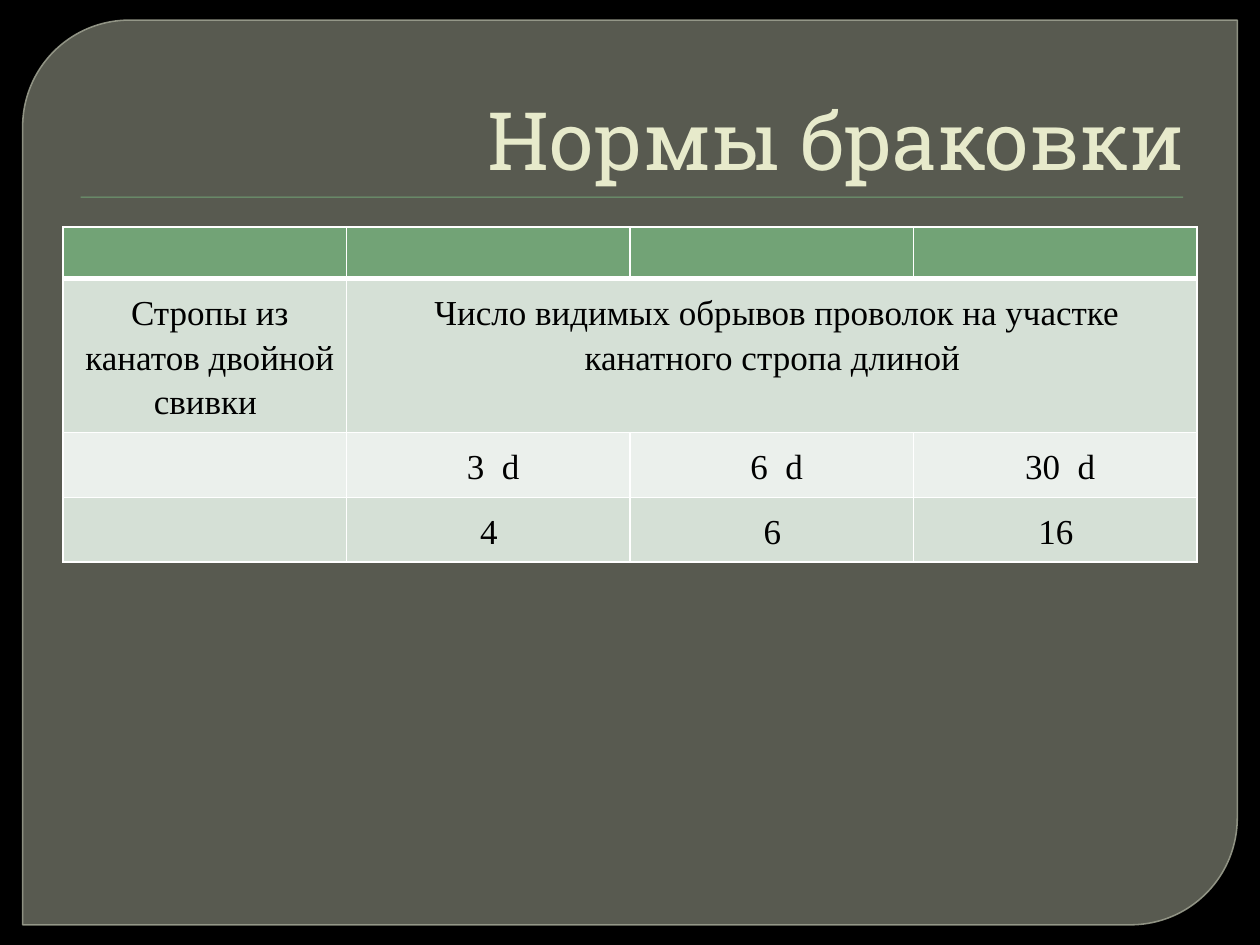
from lxml.etree import SubElement
from pptx import Presentation
from pptx.dml.color import RGBColor
from pptx.enum.shapes import MSO_SHAPE
from pptx.enum.text import MSO_ANCHOR, MSO_AUTO_SIZE, PP_ALIGN
from pptx.oxml.ns import qn
from pptx.util import Inches, Pt

THEME = {
    "back": "000000", "panel": "888B7B", "edge": "9DA090", "accent": "72A376",
    "title": "E7EACB", "text": "000000", "border": "FFFFFF",
    "bands": ["72A376", "D5E0D6", "EBF0EC", "D5E0D6"],
    "title_font": "Roboto Slab", "title_size": 46,
    "body_font": "Times New Roman", "body_size": 20,
}


def paint(fill, color, alpha=None):
    fill.solid()
    fill.fore_color.rgb = RGBColor.from_string(color)
    if alpha:
        clr = fill._xPr.find(".//" + qn("a:srgbClr"))
        SubElement(clr, qn("a:alpha"), val=str(alpha * 1000))


def style(p, text, font, size, color, **fmt):
    r = p.add_run()
    r.text = text
    r.font.name, r.font.size = font, Pt(size)
    r.font.color.rgb = RGBColor.from_string(color)
    for name, value in fmt.items():
        setattr(p, name, value)


prs = Presentation()
prs.slide_width, prs.slide_height = Inches(10), Inches(7.5)
W, H = prs.slide_width, prs.slide_height
s = prs.slides.add_slide(prs.slide_layouts[5])
paint(s.background.fill, THEME["back"])

panel = s.shapes.add_shape(MSO_SHAPE.ROUND_2_DIAG_RECTANGLE,
                           int(W * 0.018), Inches(0.16), int(W * 0.964), Inches(7.18))
panel.adjustments[0] = 0.118
panel.shadow.inherit = False
paint(panel.fill, THEME["panel"], 65)
paint(panel.line.fill, THEME["edge"], 88)
panel.line.width = Pt(0.87)

rule = s.shapes.add_shape(MSO_SHAPE.RECTANGLE,
                          int(W * 0.064), Inches(1.56), int(W * 0.875), Inches(0.01))
rule.shadow.inherit = False
paint(rule.fill, THEME["accent"])
rule.line.fill.background()

title = s.shapes.title
title.element.getparent().append(title.element)
box = {"left": int(W * 0.05), "top": Inches(0.28), "width": int(W * 0.9), "height": Inches(1.25)}
for name, value in box.items():
    setattr(title, name, value)
tf = title.text_frame
frame = {"vertical_anchor": MSO_ANCHOR.BOTTOM, "word_wrap": True, "auto_size": MSO_AUTO_SIZE.NONE}
for name, value in frame.items():
    setattr(tf, name, value)
style(tf.paragraphs[0], "Нормы браковки", THEME["title_font"], THEME["title_size"],
      THEME["title"], alignment=PP_ALIGN.RIGHT)

rows = [
    ["", "", "", ""],
    ["Стропы из канатов двойной свивки ",
     "Число видимых обрывов проволок на участке канатного стропа длиной ", "", ""],
    ["", "3  d", "6  d", "30  d"],
    ["", "4 ", "6 ", "16 "],
]
heights = [0.41, 1.22, 0.51, 0.51]
margins = {"margin_left": 0.12, "margin_top": 0.08, "margin_right": 0.04, "margin_bottom": 0.08}
table = s.shapes.add_table(len(rows), len(rows[0]), int(W * 0.05), int(H * 0.24),
                           int(W * 0.9), Inches(sum(heights))).table
table.cell(1, 1).merge(table.cell(1, 3))

for i, row in enumerate(rows):
    table.rows[i].height = Inches(heights[i])
    for j, text in enumerate(row):
        cell = table.cell(i, j)
        tcPr = cell._tc.get_or_add_tcPr()
        for side in "LRTB":
            heavy = (i, side) in [(0, "B"), (1, "T")]
            ln = SubElement(tcPr, qn("a:ln" + side), w=str(Pt(3 if heavy else 1)))
            SubElement(SubElement(ln, qn("a:solidFill")), qn("a:srgbClr"), val=THEME["border"])
        paint(cell.fill, THEME["bands"][i])
        if text:
            for name, value in margins.items():
                setattr(cell, name, Inches(value))
            style(cell.text_frame.paragraphs[0], text, THEME["body_font"], THEME["body_size"],
                  THEME["text"], alignment=PP_ALIGN.CENTER, line_spacing=1.15)

prs.save("out.pptx")
